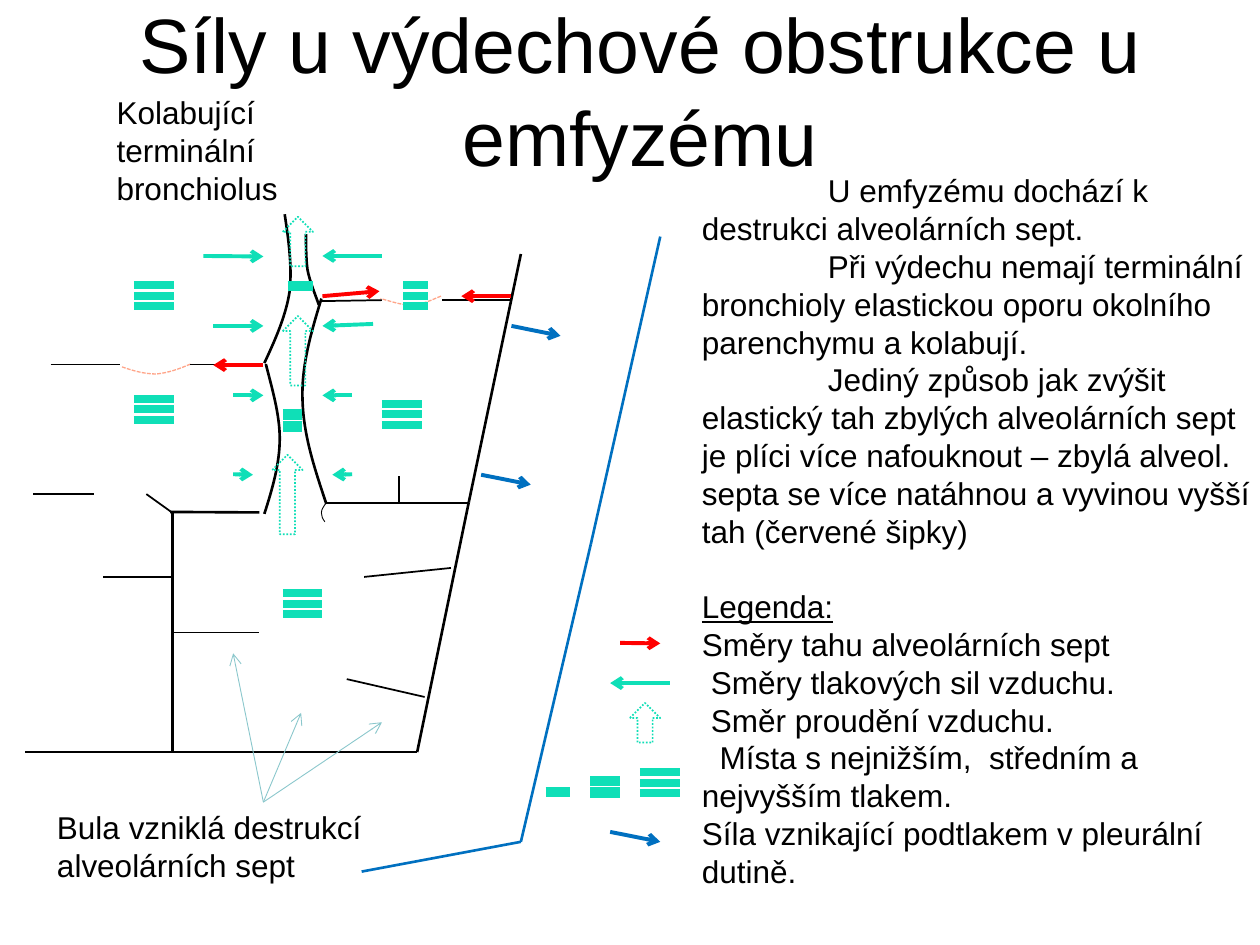
import pptx
import pptx.util
import pptx.dml.color
import pptx.enum.dml
import pptx.enum.shapes
import pptx.enum.text
import pptx.oxml.ns
from lxml import etree

Cm, Pt, qn = pptx.util.Cm, pptx.util.Pt, pptx.oxml.ns.qn
DASH = pptx.enum.dml.MSO_LINE
ALIGN = pptx.enum.text.PP_ALIGN
ANCHOR = pptx.enum.text.MSO_ANCHOR


class Theme:
    font = "Arial"
    title, body = 44, 18
    ink, septum, air, pull = "000000", "FFA589", "0FDFB7", "FF0000"
    pleura, pointer = "0070C0", "8AC7CC"
    hair, slack, thin, wall, force = 0.5, 0.75, 1, 1.5, 2.25


def rgb(color):
    return pptx.dml.color.RGBColor.from_string(color)


def write(p, text, size=Theme.body, color=Theme.ink, underline=None,
          align=None, indent=0, before=0):
    """Fill one paragraph; indent (cm) applies to its first line only."""
    p.alignment = align
    p.space_before = Pt(before)
    if indent:
        p._p.get_or_add_pPr().set("indent", str(Cm(indent)))
    r = p.add_run()
    r.text = text
    r.font.name, r.font.size = Theme.font, Pt(size)
    r.font.underline = underline
    r.font.color.rgb = rgb(color)


class Diagram:
    """Draws on one slide; all positions are in centimetres."""

    def __init__(self, s):
        self.s = s

    def style(self, line, color, width, dash=None):
        line.color.rgb = rgb(color)
        line.width = Pt(width)
        if dash:
            line.dash_style = dash

    def outline(self, sp, color, width, dash):
        sp.shadow.inherit = False
        sp.fill.background()
        self.style(sp.line, color, width, dash)

    def text(self, x, y, w, h, paragraphs, anchor=ANCHOR.TOP):
        tf = self.s.shapes.add_textbox(Cm(x), Cm(y), Cm(w), Cm(h)).text_frame
        tf.word_wrap = True
        tf.vertical_anchor = anchor
        for i, (text, fmt) in enumerate(paragraphs):
            p = tf.add_paragraph() if i else tf.paragraphs[0]
            write(p, text, **fmt)

    def line(self, x1, y1, x2, y2, color=Theme.ink, width=Theme.thin, arrow=False):
        c = self.s.shapes.add_connector(
            pptx.enum.shapes.MSO_CONNECTOR.STRAIGHT, Cm(x1), Cm(y1), Cm(x2), Cm(y2))
        self.style(c.line, color, width)
        if arrow:
            etree.SubElement(c.line._get_or_add_ln(), qn("a:tailEnd"), type="arrow")
        etree.SubElement(c._element.spPr, qn("a:effectLst"))

    def arrow(self, x1, y1, x2, y2, color, width=Theme.force):
        self.line(x1, y1, x2, y2, color, width, arrow=True)

    def curve(self, points, color=Theme.ink, width=Theme.wall, dash=None):
        """Chain of cubic Bezier arcs: a start point, then three points per arc."""
        start, *rest = [(Cm(x), Cm(y)) for x, y in points]
        fb = self.s.shapes.build_freeform(*start)
        fb.add_line_segments(rest, close=False)
        sp = fb.convert_to_shape()
        segments = list(sp._element.iter(qn("a:lnTo")))
        for i in range(0, len(segments), 3):
            arc = etree.Element(qn("a:cubicBezTo"))
            segments[i].addprevious(arc)
            for segment in segments[i:i + 3]:
                arc.append(segment[0])
                segment.getparent().remove(segment)
        self.outline(sp, color, width, dash)

    def flow(self, x, y, h):
        sp = self.s.shapes.add_shape(pptx.enum.shapes.MSO_SHAPE.UP_ARROW,
                                     Cm(x), Cm(y), Cm(0.61), Cm(h))
        self.outline(sp, Theme.air, Theme.thin, DASH.ROUND_DOT)

    def pressure(self, x, y, w, count=3, width=4.5, step=0.21):
        """Stack of bars: the more bars, the higher the pressure."""
        for i in range(count):
            self.line(x, y + i * step, x + w, y + i * step, Theme.air, width)


def main():
    prs = pptx.Presentation()
    prs.slide_width, prs.slide_height = Cm(25.4), Cm(19.05)
    d = Diagram(prs.slides.add_slide(prs.slide_layouts[6]))

    # Title
    d.text(1.1, 0.21, 23.62, 3.18,
           [("Síly u výdechové obstrukce u emfyzému",
             dict(size=Theme.title, align=ALIGN.CENTER))], ANCHOR.MIDDLE)

    # Bronchiole walls
    d.curve([(6.17, 4.72), (6.17, 4.98), (6.17, 5.21), (6.2, 5.44),
             (6.25, 5.69), (6.35, 5.92), (6.43, 6.15)])
    d.curve([(6.48, 6.02), (6.27, 6.71), (6.07, 7.39), (6.1, 8.08),
             (6.12, 8.79), (6.35, 9.47), (6.58, 10.16)])
    d.curve([(6.58, 10.13), (6.53, 10.21), (6.48, 10.26), (6.48, 10.34),
             (6.48, 10.39), (6.5, 10.46), (6.55, 10.52)], width=Theme.hair)
    d.curve([(5.36, 7.34), (5.49, 7.85), (5.64, 8.36), (5.64, 8.84),
             (5.64, 9.35), (5.49, 9.86), (5.33, 10.36)])
    d.curve([(5.74, 4.32), (5.82, 4.85), (5.89, 5.36), (5.84, 5.87),
             (5.77, 6.35), (5.56, 6.83), (5.33, 7.32)])

    # Slack septa
    for points in (
            [(3.84, 7.34), (3.61, 7.44), (3.38, 7.52), (3.15, 7.54),
             (2.9, 7.54), (2.67, 7.47), (2.44, 7.39)],
            [(8.89, 5.97), (8.69, 6.05), (8.51, 6.15), (8.28, 6.15),
             (8.08, 6.15), (7.87, 6.07), (7.67, 6.02)]):
        d.curve(points, Theme.septum, Theme.slack, DASH.SQUARE_DOT)

    # Outer walls of the alveoli
    for ends in ((6.58, 10.14, 9.45, 10.14), (9.45, 10.13, 8.41, 15.16),
                 (10.5, 5.12, 9.45, 10.13), (3.48, 10.34, 3.48, 15.16),
                 (3.43, 10.32, 5.23, 10.33), (8.41, 15.16, 3.48, 15.16),
                 (4.01, 15.16, 0.51, 15.16)):
        d.line(*ends, width=Theme.wall)

    # Septa
    for ends in ((3.48, 12.75, 5.23, 12.75), (6.99, 13.69, 8.56, 14.05),
                 (7.34, 11.63, 9.09, 11.45), (8.05, 10.11, 8.05, 9.59),
                 (6.48, 6.07, 7.7, 6.05), (8.92, 6.05, 10.31, 6.05),
                 (3.84, 7.35, 5.23, 7.35), (2.08, 11.63, 3.48, 11.63),
                 (2.95, 9.96, 3.48, 10.34), (0.67, 9.96, 1.9, 9.96),
                 (1.02, 7.35, 2.42, 7.35)):
        d.line(*ends)

    # Pleura
    for ends in ((13.31, 4.77, 11.91, 10.97), (11.91, 10.97, 10.5, 16.97),
                 (10.5, 16.97, 7.29, 17.57)):
        d.line(*ends, Theme.pleura, Theme.wall)

    # Bulla label and pointers
    for x, y in ((7.7, 14.56), (4.7, 13.17), (6.07, 14.37)):
        d.arrow(5.31, 16.17, x, y, Theme.pointer, Theme.hair)
    d.text(0.9, 16.17, 7.8, 1.8, [("Bula vzniklá destrukcí alveolárních sept", {})])
    d.text(2.1, 1.76, 4.39, 2.57, [("Kolabující terminální bronchiolus", {})])

    # Pressure levels, the last of each size in the legend
    for x, y, w in ((5.7, 11.96, 0.8), (7.7, 8.14, 0.8), (2.7, 8.04, 0.8),
                    (2.7, 5.75, 0.8), (8.13, 5.75, 0.49), (12.9, 15.57, 0.8)):
        d.pressure(x, y, w)
    for x, y, w, count in ((5.7, 8.36, 0.39, 2), (5.8, 5.77, 0.5, 1),
                           (11, 15.97, 0.49, 1), (11.9, 15.74, 0.6, 2)):
        d.pressure(x, y, w, count, width=6, step=0.24)

    # Air flow, the last one in the legend
    for x, y, h in ((5.49, 9.17, 1.6), (5.7, 6.37, 1.4),
                    (5.7, 4.37, 1), (12.7, 14.17, 0.8)):
        d.flow(x, y, h)

    # Forces, the last arrow of each colour in the legend
    forces = {
        Theme.pull: ((6.5, 5.97, 7.65, 5.87), (10.31, 5.97, 9.3, 5.97),
                     (5.31, 7.36, 4.3, 7.36), (12.5, 12.96, 13.31, 12.97)),
        Theme.air: ((7.52, 6.53, 6.5, 6.57), (7.1, 7.97, 6.5, 7.97),
                    (7.7, 5.16, 6.5, 5.16), (4.7, 9.56, 5.1, 9.57),
                    (4.3, 6.57, 5.31, 6.57), (4.1, 5.16, 5.31, 5.17),
                    (7.1, 9.56, 6.7, 9.57), (4.7, 7.97, 5.31, 7.97),
                    (13.5, 13.77, 12.3, 13.77)),
        Theme.pleura: ((10.31, 6.57, 11.3, 6.77), (9.7, 9.57, 10.7, 9.77),
                       (12.3, 16.77, 13.31, 16.97)),
    }
    for color, arrows in forces.items():
        for ends in arrows:
            d.arrow(*ends, color)

    # Explanation and legend
    lead = dict(indent=2.54)
    d.text(13.9, 3.33, 11.71, 14.9, [
        ("U emfyzému dochází k destrukci alveolárních sept.", lead),
        ("Při výdechu nemají terminální bronchioly elastickou oporu okolního "
         "parenchymu a kolabují.", lead),
        ("Jediný způsob jak zvýšit elastický tah zbylých alveolárních sept je plíci "
         "více nafouknout – zbylá alveol. septa se více natáhnou a vyvinou vyšší "
         "tah (červené šipky)", lead),
        ("Legenda:", dict(underline=True, before=21.6)),
        ("Směry tahu alveolárních sept", {}),
        ("Směry tlakových sil vzduchu.", dict(indent=0.18)),
        ("Směr proudění vzduchu.", dict(indent=0.18)),
        ("Místa s nejnižším,  středním a nejvyšším tlakem.", dict(indent=0.36)),
        ("Síla vznikající podtlakem v pleurální dutině.", {}),
    ])

    prs.save("out.pptx")


if __name__ == "__main__":
    main()
